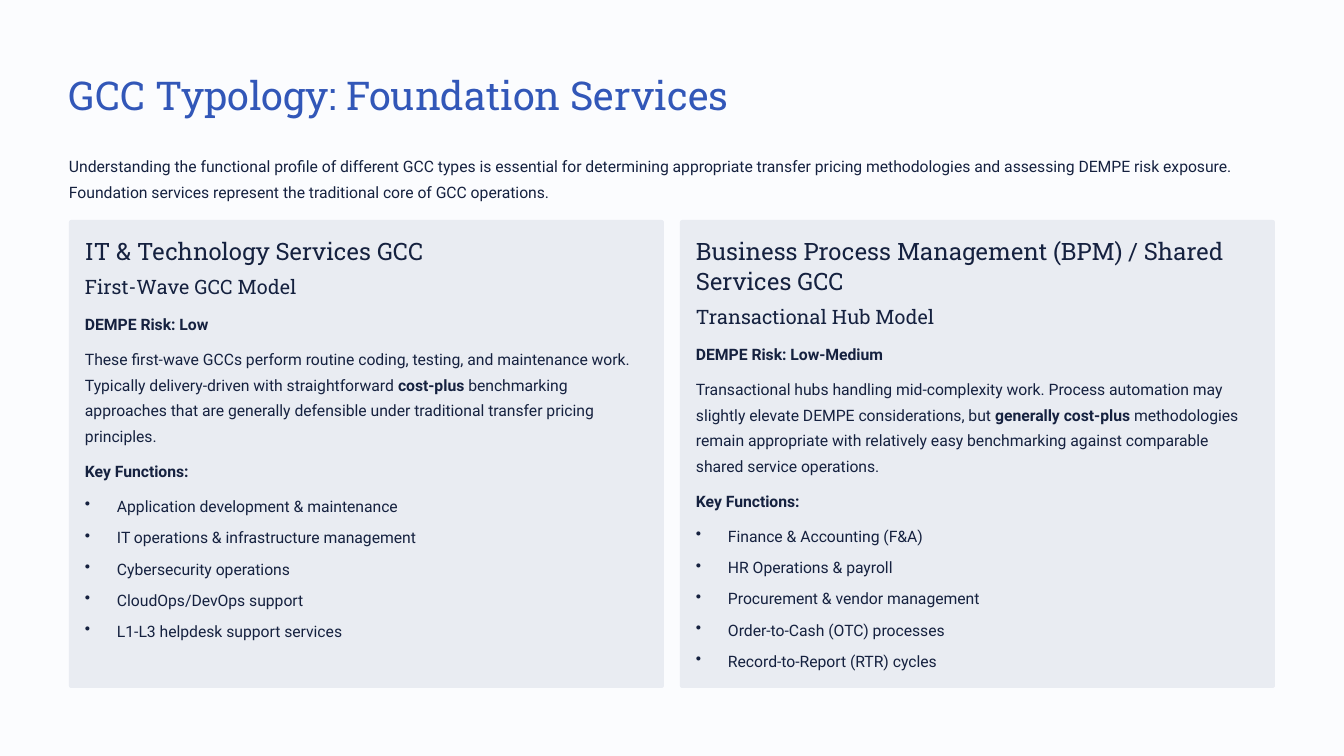
from dataclasses import dataclass

from lxml import etree
from pptx import Presentation
from pptx import util as u
from pptx.dml.color import RGBColor
from pptx.enum import shapes, text
from pptx.oxml.ns import qn

EMU_PER_PX = 914400 / 84


@dataclass(frozen=True)
class Style:
    font: str
    size: float
    leading: float
    color: str
    bold: bool = False


class Theme:
    page = "FBFCFE"
    card = "E9ECF2"
    ink = "15213F"
    title = Style("Roboto Slab", 34, 43, "3257B8")
    heading = Style("Roboto Slab", 20.5, 25.5, ink)
    model = Style("Roboto Slab", 17, 21.5, ink)
    body = Style("Roboto", 13.5, 22, ink)
    label = Style("Roboto", 13.5, 22, ink, True)
    bullet_gap = 4.8


@dataclass(frozen=True)
class Typology:
    heading: str
    heading_lines: int
    model: str
    risk: str
    summary: tuple  # plain and bold spans in turn
    functions: tuple


TYPOLOGIES = (
    Typology(
        "IT & Technology Services GCC", 1, "First-Wave GCC Model", "DEMPE Risk: Low",
        ("These first-wave GCCs perform routine coding, testing, and maintenance work. "
         "Typically delivery-driven with straightforward ",
         "cost-plus",
         " benchmarking approaches that are generally defensible under traditional "
         "transfer pricing principles."),
        ("Application development & maintenance", "IT operations & infrastructure management",
         "Cybersecurity operations", "CloudOps/DevOps support",
         "L1-L3 helpdesk support services")),
    Typology(
        "Business Process Management (BPM) / Shared Services GCC", 2,
        "Transactional Hub Model", "DEMPE Risk: Low-Medium",
        ("Transactional hubs handling mid-complexity work. Process automation may slightly "
         "elevate DEMPE considerations, but ",
         "generally cost-plus",
         " methodologies remain appropriate with relatively easy benchmarking against "
         "comparable shared service operations."),
        ("Finance & Accounting (F&A)", "HR Operations & payroll",
         "Procurement & vendor management", "Order-to-Cash (OTC) processes",
         "Record-to-Report (RTR) cycles")),
)


def px(length):
    return u.Emu(round(length * EMU_PER_PX))


def add_bullet(para, indent):
    properties = para._p.get_or_add_pPr()
    properties.set("marL", str(px(indent)))
    properties.set("indent", str(-px(indent)))
    etree.SubElement(properties, qn("a:buChar")).set("char", "•")


def add_text(page, box, style, paragraphs, bulleted=False):
    """Each paragraph is a tuple of spans; every second span is bold."""
    frame = page.shapes.add_textbox(*map(px, box)).text_frame
    frame.word_wrap = True
    frame.margin_left = frame.margin_top = frame.margin_right = frame.margin_bottom = 0
    for index, spans in enumerate(paragraphs):
        para = frame.paragraphs[0] if index == 0 else frame.add_paragraph()
        para.alignment = text.PP_ALIGN.LEFT
        if bulleted:
            add_bullet(para, 32)
        para.line_spacing = u.Pt(style.leading)
        if index:
            para.space_before = u.Pt(Theme.bullet_gap)
        for position, words in enumerate(spans):
            span = para.add_run()
            span.text = words
            span.font.name = style.font
            span.font.size = u.Pt(style.size)
            span.font.bold = style.bold or position % 2 == 1
            span.font.color.rgb = RGBColor.from_string(style.color)


def add_header(page, left, top, width):
    add_text(page, (left, top, width, 50), Theme.title,
             [("GCC Typology: Foundation Services",)])
    add_text(page, (left, top + 82, width, 51), Theme.body, [(
        "Understanding the functional profile of different GCC types is essential for "
        "determining appropriate transfer pricing methodologies and assessing DEMPE risk "
        "exposure. Foundation services represent the traditional core of GCC operations.",)])


def add_card(page, left, top, width, height, typology):
    # Panel
    panel = page.shapes.add_shape(shapes.MSO_SHAPE.ROUNDED_RECTANGLE,
                                  *map(px, (left, top, width, height)))
    panel.adjustments[0] = 0.005
    panel.shadow.inherit = False
    panel.fill.solid()
    panel.fill.fore_color.rgb = RGBColor.from_string(Theme.card)
    panel.line.fill.background()

    # Text blocks, stacked from the top: style, height, gap after, paragraphs
    blocks = (
        (Theme.heading, 30 * typology.heading_lines, 7, [(typology.heading,)]),
        (Theme.model, 25, 10, [(typology.model,)]),
        (Theme.label, 26, 9, [(typology.risk,)]),
        (Theme.body, 103, 9, [typology.summary]),
        (Theme.label, 26, 9, [("Key Functions:",)]),
    )
    pad = 16
    inner_left, inner_width, y = left + pad, width - 2 * pad, top + pad
    for style, block_height, gap, paragraphs in blocks:
        add_text(page, (inner_left, y, inner_width, block_height), style, paragraphs)
        y += block_height + gap

    # Key functions list
    add_text(page, (inner_left, y, inner_width, 151), Theme.body,
             [(function,) for function in typology.functions], bulleted=True)


def main():
    deck = Presentation()
    deck.slide_width, deck.slide_height = px(1344), px(756)
    page = deck.slides.add_slide(deck.slide_layouts[6])
    page.background.fill.solid()
    page.background.fill.fore_color.rgb = RGBColor.from_string(Theme.page)

    left, width, gap = 69, 1206, 16
    add_header(page, left, 68, width)
    card_width = (width - gap) // 2
    for column, typology in enumerate(TYPOLOGIES):
        add_card(page, left + column * (card_width + gap), 220, card_width, 468, typology)
    deck.save("out.pptx")


if __name__ == "__main__":
    main()
